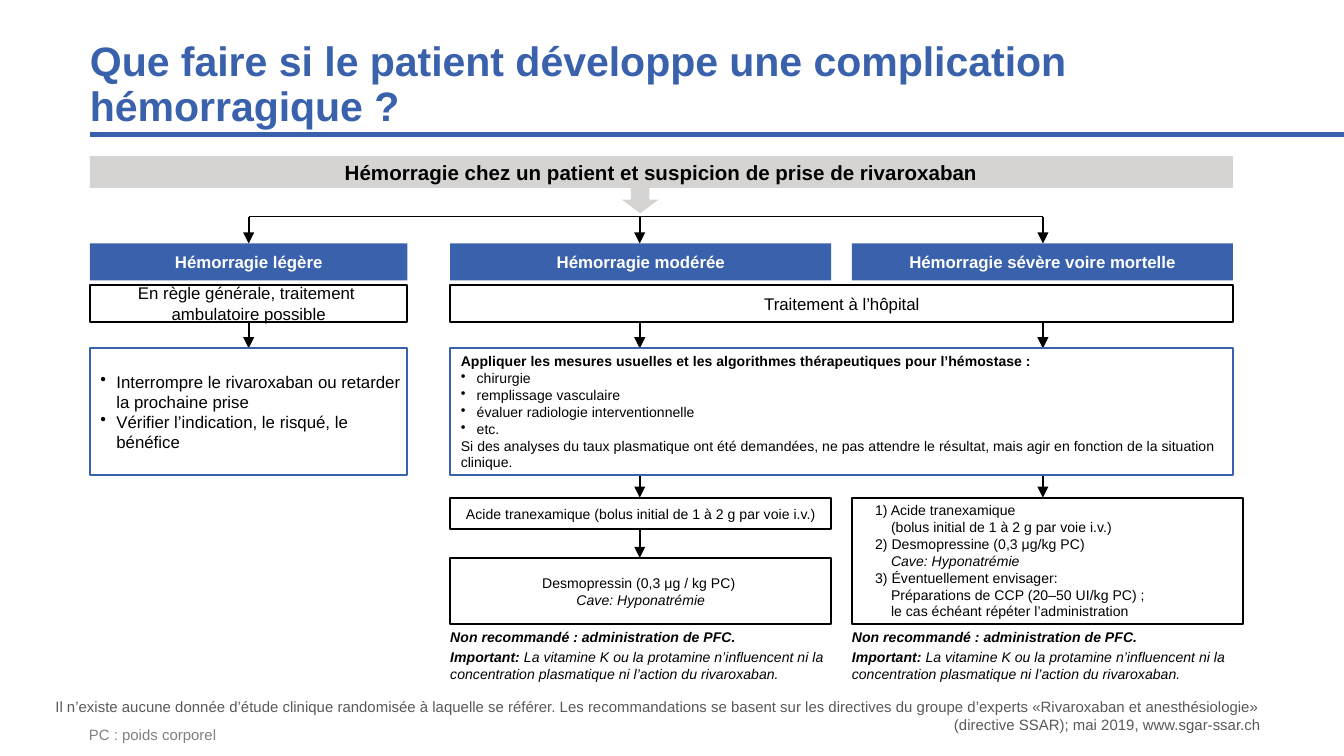
from lxml.etree import SubElement
from pptx import Presentation
from pptx.dml.color import RGBColor
from pptx.enum.shapes import MSO_CONNECTOR as Link, MSO_SHAPE as Form
from pptx.enum.text import MSO_ANCHOR as Anchor, PP_ALIGN as Align
from pptx.oxml.ns import qn
from pptx.util import Cm, Pt

BLUE, GREY, BLACK, WHITE = "3961AC", "D5D4D2", "000000", "FFFFFF"


def color(code):
    return RGBColor.from_string(code)


def para(*runs, **style):
    """A paragraph: runs are texts or (text, bold, italic)."""
    return runs, style


def item(text):
    return para(text, left=0.5, hang=0.3, bullet="•")


class Chart:
    font = "Arial"

    def __init__(self, slide):
        self.slide = slide
        self.shapes = slide.shapes

    def label(self, shape, paras, size, ink=BLACK, bold=False, italic=False,
              align=Align.LEFT, anchor=Anchor.MIDDLE, lead=None):
        frame = shape.text_frame
        frame.word_wrap = True
        frame.vertical_anchor = anchor
        frame.margin_left = frame.margin_right = 0
        frame.margin_top = frame.margin_bottom = 0
        for i, (runs, style) in enumerate(paras):
            p = frame.add_paragraph() if i else frame.paragraphs[0]
            p.alignment = align
            if lead:
                p.line_spacing = lead
            if "after" in style:
                p.space_after = Pt(style["after"])
            if "left" in style:
                props = p._p.get_or_add_pPr()
                props.set("marL", str(Cm(style["left"])))
                props.set("indent", str(-Cm(style.get("hang", 0))))
                if "bullet" in style:
                    SubElement(props, qn("a:buChar"), char=style["bullet"])
            font = p.font
            font.name, font.size = self.font, Pt(size)
            font.bold = style.get("bold", bold)
            font.italic = italic
            font.color.rgb = color(ink)
            for part in runs:
                self.run(p, *([part] if isinstance(part, str) else part))

    def run(self, p, text, bold=None, italic=None):
        for i, line in enumerate(text.split("\n")):
            if i:
                p.add_line_break()
            if line:
                r = p.add_run()
                r.text = line
                if bold is not None:
                    r.font.bold = bold
                if italic is not None:
                    r.font.italic = italic

    def text(self, x, y, w, h, *paras, **style):
        box = self.shapes.add_textbox(Cm(x), Cm(y), Cm(w), Cm(h))
        self.label(box, paras, **style)

    def box(self, x, y, w, h, *paras, fill=WHITE, edge=None,
            form=Form.RECTANGLE, **style):
        shape = self.shapes.add_shape(form, Cm(x), Cm(y), Cm(w), Cm(h))
        shape.shadow.inherit = False
        shape.fill.solid()
        shape.fill.fore_color.rgb = color(fill)
        if edge:
            shape.line.color.rgb = color(edge)
            shape.line.width = Pt(1)
        else:
            shape.line.fill.background()
        if paras:
            self.label(shape, paras, **style)

    def line(self, x1, y1, x2, y2, ink=BLACK, width=1, head=False):
        link = self.shapes.add_connector(
            Link.STRAIGHT, Cm(x1), Cm(y1), Cm(x2), Cm(y2))
        link.line.color.rgb = color(ink)
        link.line.width = Pt(width)
        props = link._element.spPr
        if head:
            SubElement(props.get_or_add_ln(), qn("a:tailEnd"),
                       type="triangle")
        SubElement(props, qn("a:effectLst"))


def main():
    deck = Presentation()
    deck.slide_width, deck.slide_height = Cm(25.4), Cm(14.28)
    c = Chart(deck.slides.add_slide(deck.slide_layouts[6]))

    # Grid: column edges, widths, and arrow axes
    x1, x2, x3 = 1.7, 8.51, 16.1
    w1, w2, wide, full = 6, 7.2, 14.8, 21.6
    a1, a2, a3 = axes = 4.7, 12.09, 19.71
    mid = Align.CENTER

    # Title and rule
    c.line(x1, 2.54, 25.4, 2.54, BLUE, 2.25)
    c.text(x1, 0.76, 23, 1.7,
           para("Que faire si le patient développe une complication "
                "hémorragique ?"),
           size=22, ink=BLUE, bold=True, anchor=Anchor.BOTTOM, lead=0.9)

    # Arrows
    c.line(a1, 4.09, a3, 4.09, width=0.75)
    for x in axes:
        c.line(x, 4.09, x, 4.6, head=True)
        c.line(x, 6.08, x, 6.58, head=True)
    for x in (a2, a3):
        c.line(x, 8.84, x, 9.4, head=True)
    c.line(a2, 9.88, a2, 10.54, head=True)

    # Starting point
    c.box(11.75, 3.51, 0.7, 0.52, fill=GREY, form=Form.DOWN_ARROW)
    c.box(x1, 2.95, full, 0.6,
          para("Hémorragie chez un patient et suspicion de prise de "
               "rivaroxaban"),
          fill=GREY, size=11, bold=True, align=mid)

    # Severity levels
    for x, w, name in ((x1, w1, "légère"), (x2, w2, "modérée"),
                       (x3, w2, "sévère voire mortelle")):
        c.box(x, 4.6, w, 0.7, para("Hémorragie " + name), fill=BLUE,
              size=9, ink=WHITE, bold=True, align=mid)

    # Place of care
    for x, w, place in (
            (x1, w1, "En règle générale, traitement \nambulatoire possible"),
            (x2, wide, "Traitement à l’hôpital")):
        c.box(x, 5.38, w, 0.7, para(place), edge=BLACK, size=9, align=mid)

    # Measures
    c.box(x1, 6.58, w1, 2.4,
          item("Interrompre le rivaroxaban ou retarder la prochaine prise"),
          item("Vérifier l’indication, le risqué, le bénéfice"),
          edge=BLUE, size=9)
    c.box(x2, 6.58, wide, 2.4,
          para("Appliquer les mesures usuelles et les algorithmes "
               "thérapeutiques pour l’hémostase :", left=0.2, bold=True),
          *map(item, ("chirurgie", "remplissage vasculaire",
                      "évaluer radiologie interventionnelle", "etc.")),
          para("Si des analyses du taux plasmatique ont été demandées, ne pas "
               "attendre le résultat, mais agir en fonction de la situation "
               "clinique.", left=0.2),
          edge=BLUE, size=7.5)

    # Drugs
    cave = ("Cave: Hyponatrémie", False, True)
    step = dict(left=0.74, hang=0.3)
    c.box(x2, 9.4, w2, 0.6,
          para("Acide tranexamique (bolus initial de 1 à 2 g par voie i.v.)"),
          edge=BLACK, size=7.5, align=mid)
    c.box(x2, 10.54, w2, 1.25,
          para("Desmopressin (0,3 μg / kg PC) \n", cave),
          edge=BLACK, size=7.5, align=mid)
    c.box(x3, 9.4, 7.4, 2.39,
          para("1) Acide tranexamique \n"
               "(bolus initial de 1 à 2 g par voie i.v.)", **step),
          para("2) Desmopressine (0,3 μg/kg PC) \n", cave, **step),
          para("3) Éventuellement envisager: \n"
               "Préparations de CCP (20–50 UI/kg PC) ; \n"
               "le cas échéant répéter l’administration", **step),
          edge=BLACK, size=7.5)

    # Warnings
    for x, w in ((x2, 7.4), (x3, 7.26)):
        c.text(x, 11.58, w, 1.6,
               para("Non recommandé : administration de PFC.",
                    bold=True, after=2),
               para(("Important: ", True),
                    "La vitamine K ou la protamine n’influencent ni la "
                    "concentration plasmatique ni l’action du rivaroxaban."),
               size=7.5, italic=True)

    # Footnotes
    c.text(0.83, 13.16, 23, 0.69,
           para("Il n’existe aucune donnée d’étude clinique randomisée à "
                "laquelle se référer. Les recommandations se basent sur les "
                "directives du groupe d’experts «Rivaroxaban et "
                "anesthésiologie» (directive SSAR); mai 2019, "
                "www.sgar-ssar.ch"),
           size=8, ink="595959", align=Align.RIGHT, anchor=Anchor.BOTTOM)
    c.text(1.68, 13.72, 10.67, 0.33, para("PC : poids corporel"),
           size=8, ink="808080", anchor=Anchor.BOTTOM)

    deck.save("out.pptx")


if __name__ == "__main__":
    main()
